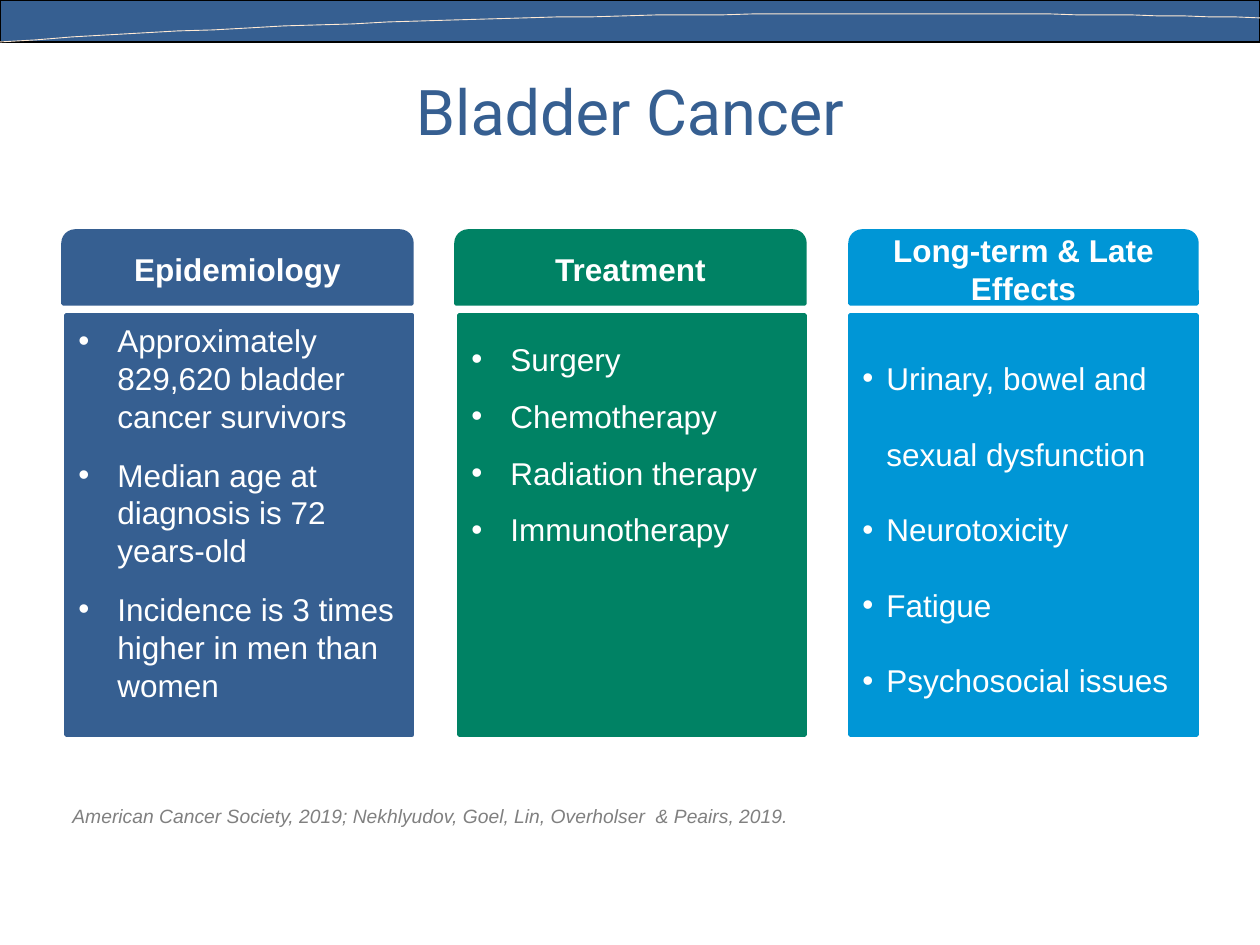
from lxml import etree
from pptx import Presentation
from pptx import util as u
from pptx.dml.color import RGBColor
from pptx.enum import shapes, text
from pptx.oxml import ns

HUES = {"blue": "365F91", "green": "008264", "sky": "0096D6", "white": "FFFFFF",
        "black": "000000", "cream": "FFEAD5", "gray": "808080"}
TITLE = "Bladder Cancer"
CITE = "American Cancer Society, 2019; Nekhlyudov, Goel, Lin, Overholser  & Peairs, 2019."
CARDS = [
    {"head": "Epidemiology", "hue": "blue", "left": 63, "wide": 349, "inset": 3,
     "indent": 39, "lead": 1, "gap": 12,
     "items": ["Approximately 829,620 bladder cancer survivors",
               "Median age at diagnosis is 72 years-old",
               "Incidence is 3 times higher in men than women"]},
    {"head": "Treatment", "hue": "green", "left": 456, "wide": 349, "inset": 3,
     "indent": 39, "lead": 1.5, "gap": 0,
     "items": ["Surgery", "Chemotherapy", "Radiation therapy", "Immunotherapy"]},
    {"head": "Long-term & Late Effects", "hue": "sky", "left": 850, "wide": 347, "inset": 0,
     "indent": 24, "lead": 2, "gap": 0,
     "items": ["Urinary, bowel and sexual dysfunction", "Neurotoxicity",
               "Fatigue", "Psychosocial issues"]},
]
CURVE = [(0, 42), (478, 10), (937, 10), (1260, 18)]
STEPS = 40
SCALE = 914400 / 126


def px(n):
    return u.Emu(round(n * SCALE))


def tint(name):
    return RGBColor.from_string(HUES[name])


def paint(shape, fill, line, wide):
    shape.shadow.inherit = False
    if fill:
        shape.fill.solid()
        shape.fill.fore_color.rgb = tint(fill)
    else:
        shape.fill.background()
    shape.line.color.rgb = tint(line)
    shape.line.width = u.Pt(wide)


def block(slide, kind, box, fill, line, wide):
    shape = slide.shapes.add_shape(kind, *map(px, box))
    paint(shape, fill, line, wide)
    return shape


def write(para, words, size, hue, face="Arial", bold=False, slant=False):
    run = para.add_run()
    run.text = words
    font = run.font
    font.name, font.size, font.bold, font.italic = face, u.Pt(size), bold, slant
    font.color.rgb = tint(hue)


def bullet(para, indent):
    props = para._p.get_or_add_pPr()
    props.set("marL", str(px(indent)))
    props.set("indent", str(-px(indent)))
    etree.SubElement(props, ns.qn("a:buFont")).set("typeface", "Arial")
    etree.SubElement(props, ns.qn("a:buChar")).set("char", "•")


def bezier(t):
    parts = ((1 - t) ** 3, 3 * t * (1 - t) ** 2, 3 * t * t * (1 - t), t ** 3)
    return tuple(sum(k * p[i] for k, p in zip(parts, CURVE)) for i in (0, 1))


def banner(slide):
    block(slide, shapes.MSO_SHAPE.RECTANGLE, (0, 0, 1260, 42), "blue", "black", 0.75)
    dots = [bezier(i / STEPS) for i in range(STEPS + 1)]
    pen = slide.shapes.build_freeform(*dots[0], scale=SCALE)
    pen.add_line_segments(dots[1:], close=False)
    paint(pen.convert_to_shape(), None, "cream", 0.5)


def card(slide, data):
    left, wide, hue, inset = data["left"], data["wide"], data["hue"], data["inset"]
    body = block(slide, shapes.MSO_SHAPE.RECTANGLE,
                 (left + inset, 315, wide - inset, 420), hue, hue, 2)
    frame = body.text_frame
    frame.word_wrap = True
    frame.vertical_anchor = text.MSO_ANCHOR.TOP
    for i, item in enumerate(data["items"]):
        para = frame.add_paragraph() if i else frame.paragraphs[0]
        bullet(para, data["indent"])
        para.alignment = text.PP_ALIGN.LEFT
        para.line_spacing = float(data["lead"])
        if i:
            para.space_before = u.Pt(data["gap"])
        write(para, item, 18, "white")

    head = block(slide, shapes.MSO_SHAPE.ROUND_2_SAME_RECTANGLE,
                 (left, 231, wide, 73), hue, hue, 2)
    frame = head.text_frame
    frame.word_wrap = True
    frame.vertical_anchor = text.MSO_ANCHOR.MIDDLE
    frame.paragraphs[0].alignment = text.PP_ALIGN.CENTER
    write(frame.paragraphs[0], data["head"], 18, "white", bold=True)


def main():
    deck = Presentation()
    deck.slide_width, deck.slide_height = px(1260), px(945)
    slide = deck.slides.add_slide(deck.slide_layouts[5])

    title = slide.shapes.title
    title.left, title.top, title.width, title.height = map(px, (63, 42, 1134, 136))
    title.text_frame.vertical_anchor = text.MSO_ANCHOR.MIDDLE
    para = title.text_frame.paragraphs[0]
    para.alignment = text.PP_ALIGN.CENTER
    write(para, TITLE, 36, "blue", "Roboto")

    banner(slide)
    for data in CARDS:
        card(slide, data)

    note = slide.shapes.add_textbox(*map(px, (60, 798, 1137, 36))).text_frame
    note.word_wrap = True
    write(note.paragraphs[0], CITE, 11, "gray", slant=True)
    deck.save("out.pptx")


if __name__ == "__main__":
    main()
